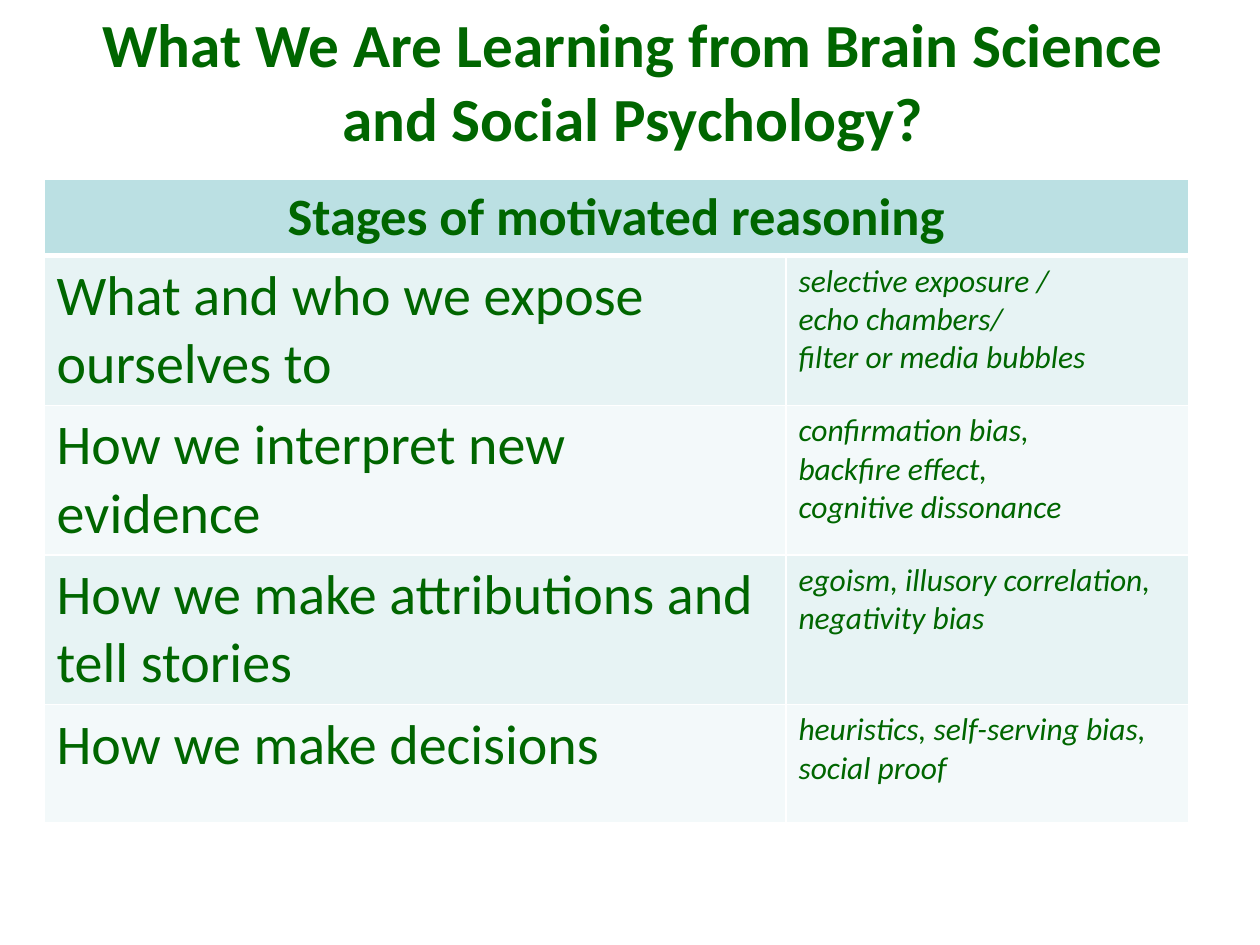
"""Build the slide on the stages of motivated reasoning."""
from lxml.etree import SubElement
from pptx import Presentation
from pptx.dml.color import RGBColor
from pptx.enum.text import MSO_ANCHOR as Anchor, MSO_AUTO_SIZE as AutoSize, PP_ALIGN as Align
from pptx.oxml.ns import qn
from pptx.util import Emu, Pt

COLORS = {"text": "006600", "header": "BBE0E3", "odd": "E7F3F4", "even": "F3F9FA", "border": "FFFFFF"}
STAGES = [
    ("What and who we expose ourselves to",
     ["selective exposure /", "echo chambers/", "filter or media bubbles"]),
    ("How we interpret new evidence",
     ["confirmation bias,", "backfire effect,", "cognitive dissonance"]),
    ("How we make attributions and tell stories",
     ["egoism, illusory correlation, negativity bias"]),
    ("How we make decisions",
     ["heuristics, self-serving bias, social proof"]),
]


def px(length):
    return Emu(round(length * 914400 / 126))


def write(frame, lines, size, bold=False, italic=False, align=Align.LEFT):
    for index, line in enumerate(lines):
        paragraph = frame.paragraphs[0] if index == 0 else frame.add_paragraph()
        paragraph.alignment = align
        run = paragraph.add_run()
        run.text = line
        font = run.font
        font.name, font.size, font.bold, font.italic = "Calibri", Pt(size), bold, italic
        font.color.rgb = RGBColor.from_string(COLORS["text"])


deck = Presentation()
deck.slide_width, deck.slide_height = px(1260), px(945)
slide = deck.slides.add_slide(deck.slide_layouts[5])

title = slide.shapes.title
title.left, title.top, title.width, title.height = px(66), px(1), px(1134), px(158)
title.text_frame.word_wrap = True
title.text_frame.auto_size = AutoSize.NONE
title.text_frame.vertical_anchor = Anchor.MIDDLE
write(title.text_frame, ["What We Are Learning from Brain Science and Social Psychology?"],
      35, bold=True, align=Align.CENTER)

widths, heights = [742, 403], [73] + [118] * len(STAGES)
stages = slide.shapes.add_table(len(heights), len(widths), px(44), px(179),
                                px(sum(widths)), px(sum(heights))).table
for column, width in zip(stages.columns, widths):
    column.width = px(width)
for row, height in zip(stages.rows, heights):
    row.height = px(height)

for row_index, row in enumerate(stages.rows):
    band = "header" if row_index == 0 else "odd" if row_index % 2 else "even"
    edges = {"lnL": 1, "lnR": 1, "lnT": 3 if row_index == 1 else 1, "lnB": 3 if row_index == 0 else 1}
    for cell in row.cells:
        properties = cell._tc.get_or_add_tcPr()
        for edge, points in edges.items():
            line = SubElement(properties, qn(f"a:{edge}"), w=str(Pt(points)))
            SubElement(SubElement(line, qn("a:solidFill")), qn("a:srgbClr"), val=COLORS["border"])
        cell.fill.solid()
        cell.fill.fore_color.rgb = RGBColor.from_string(COLORS[band])

heading = stages.cell(0, 0)
heading.merge(stages.cell(0, 1))
write(heading.text_frame, ["Stages of motivated reasoning"], 30, bold=True, align=Align.CENTER)
for row_index, (stage, biases) in enumerate(STAGES, start=1):
    write(stages.cell(row_index, 0).text_frame, [stage], 32)
    write(stages.cell(row_index, 1).text_frame, biases, 18, italic=True)

deck.save("out.pptx")
